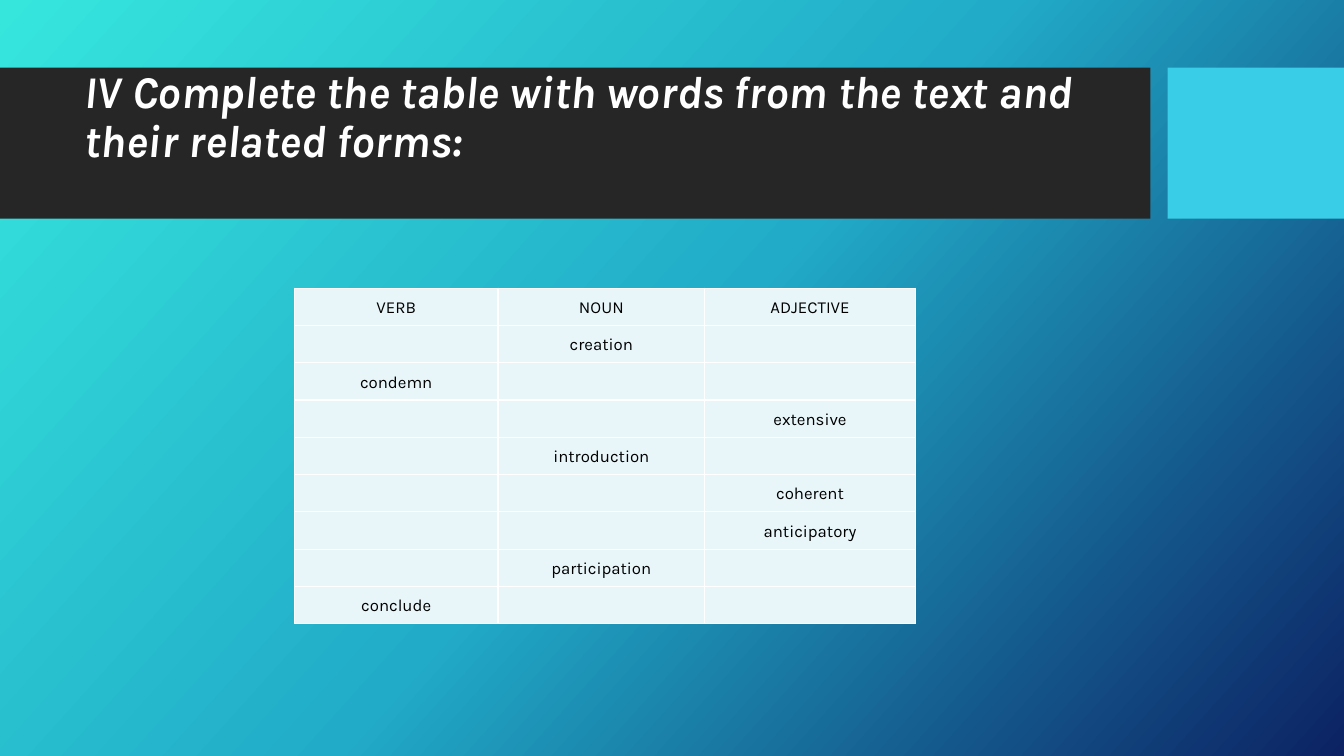
from copy import deepcopy

from lxml.etree import SubElement
from pptx import Presentation
from pptx.dml.color import RGBColor
from pptx.enum.shapes import MSO_SHAPE
from pptx.enum.text import MSO_ANCHOR, PP_ALIGN
from pptx.oxml.ns import qn
from pptx.util import Inches, Pt

TITLE = "IV Complete the table with words from the text and their related forms:"
HEADS = ["VERB", "NOUN", "ADJECTIVE"]
WORDS = [("NOUN", "creation"), ("VERB", "condemn"), ("ADJECTIVE", "extensive"),
         ("NOUN", "introduction"), ("ADJECTIVE", "coherent"),
         ("ADJECTIVE", "anticipatory"), ("NOUN", "participation"),
         ("VERB", "conclude")]
COLS = [2.02, 2.05, 2.09]
ROW = 0.363
WIDTH, HEIGHT = 13.33, 7.5
BAND_TOP, BAND_H = 0.67, 1.5
FONT = "Karla"
WHITE = RGBColor(0xFF, 0xFF, 0xFF)
BLACK = RGBColor(0, 0, 0)
CHARCOAL = RGBColor(0x26, 0x26, 0x26)
CYAN = RGBColor(0x39, 0xCD, 0xE7)
PALE = RGBColor(0xE8, 0xF6, 0xFA)
GRADIENT = [(0, RGBColor(0x36, 0xE6, 0xDD)), (0.5, RGBColor(0x21, 0xAB, 0xC8)),
            (1, RGBColor(0x0C, 0x22, 0x63))]


def paint_background(s):
    fill = s.background.fill
    fill.gradient()
    fill.gradient_angle = 360 - 42
    stops = s._element.xpath(".//a:gsLst")[0]
    stops.insert(1, deepcopy(stops[0]))
    for stop, (pos, color) in zip(fill.gradient_stops, GRADIENT):
        stop.position = pos
        stop.color.rgb = color


def add_band(s, left, width, color):
    sp = s.shapes.add_shape(MSO_SHAPE.RECTANGLE, Inches(left), Inches(BAND_TOP),
                            Inches(width), Inches(BAND_H))
    sp.shadow.inherit = False
    sp.fill.solid()
    sp.fill.fore_color.rgb = color
    sp.line.fill.background()


def style(font, size, color):
    font.name, font.size, font.color.rgb = FONT, Pt(size), color


def add_title(s):
    sp = s.shapes.add_textbox(Inches(0.74), Inches(0.7), Inches(10.51), Inches(0.95))
    tf = sp.text_frame
    tf.word_wrap = True
    tf.vertical_anchor = MSO_ANCHOR.MIDDLE
    tf.margin_top = tf.margin_bottom = 0
    p = tf.paragraphs[0]
    p.line_spacing = 0.9
    r = p.add_run()
    r.text = TITLE
    style(r.font, 32.4, WHITE)
    r.font.bold = r.font.italic = True


def fill_cell(cell, text):
    cell.margin_left = cell.margin_right = Inches(0.07)
    cell.margin_top = cell.margin_bottom = Inches(0.07)
    p = cell.text_frame.paragraphs[0]
    p.alignment = PP_ALIGN.CENTER
    p.line_spacing = 1.15
    if text:
        r = p.add_run()
        r.text = text
        style(r.font, 12, BLACK)
    else:
        SubElement(p._p, qn("a:endParaRPr"), sz="1200")
        SubElement(p._p[-1], qn("a:latin"), typeface=FONT)
    pr = cell._tc.get_or_add_tcPr()
    for side in ("lnL", "lnR", "lnT", "lnB"):
        ln = SubElement(pr, qn(f"a:{side}"), w=str(Pt(1)))
        SubElement(SubElement(ln, qn("a:solidFill")), qn("a:srgbClr"), val=str(WHITE))
    cell.fill.solid()
    cell.fill.fore_color.rgb = PALE


def add_word_table(s):
    rows = [HEADS] + [[word if head == kind else "" for head in HEADS]
                      for kind, word in WORDS]
    table = s.shapes.add_table(len(rows), len(HEADS), Inches(2.92), Inches(2.86),
                               Inches(sum(COLS)), Inches(ROW * len(rows))).table
    table.first_row = table.horz_banding = False
    for col, width in zip(table.columns, COLS):
        col.width = Inches(width)
    for i, row in enumerate(rows):
        table.rows[i].height = Inches(ROW)
        for j, text in enumerate(row):
            fill_cell(table.cell(i, j), text)


def main():
    """Build the word-forms exercise slide."""
    prs = Presentation()
    prs.slide_width, prs.slide_height = Inches(WIDTH), Inches(HEIGHT)
    s = prs.slides.add_slide(prs.slide_layouts[6])
    paint_background(s)
    add_band(s, 0, 11.41, CHARCOAL)
    add_band(s, 11.58, WIDTH - 11.58, CYAN)
    add_title(s)
    add_word_table(s)
    prs.save("out.pptx")


if __name__ == "__main__":
    main()
